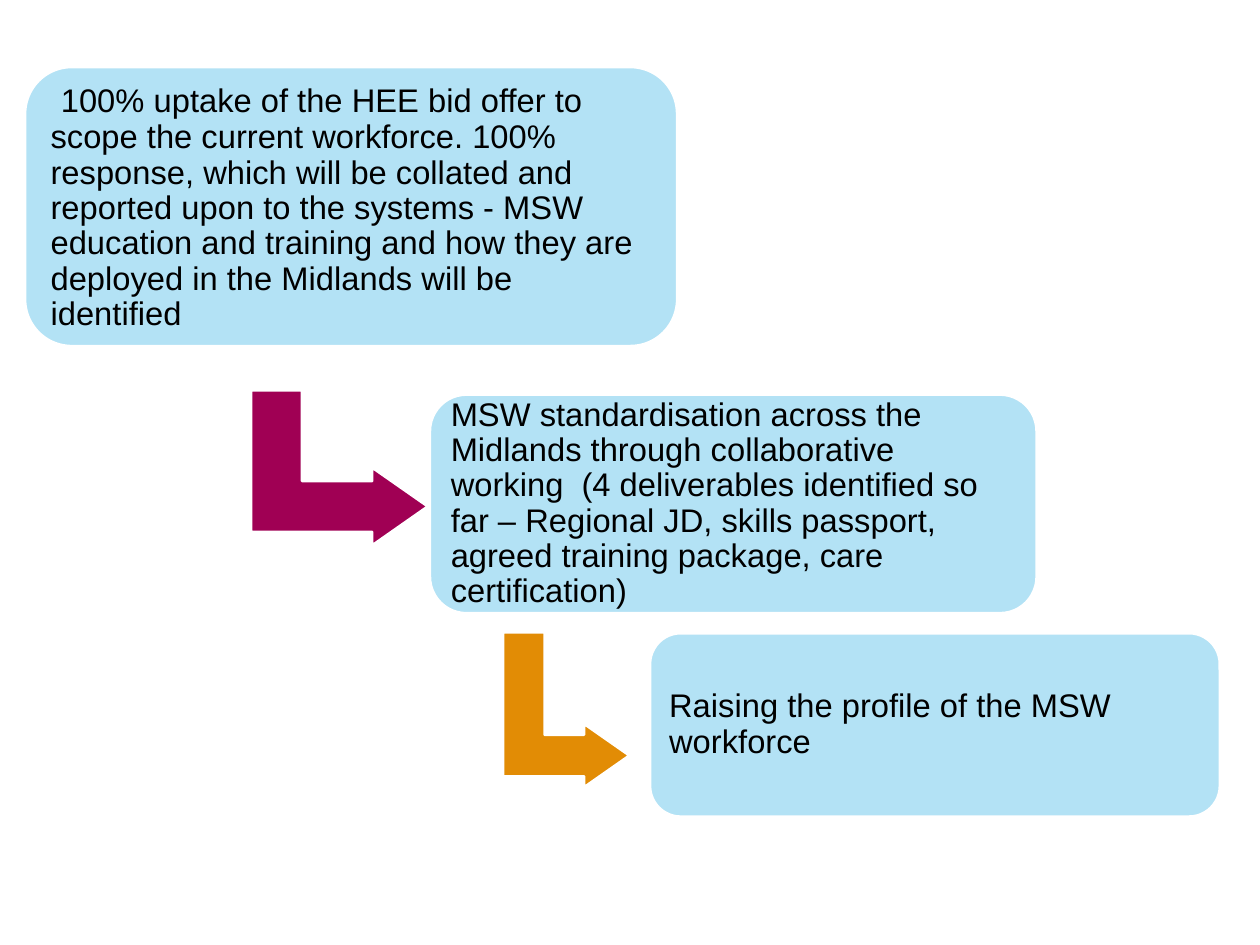
from pptx import Presentation
from pptx.dml.color import RGBColor
from pptx.enum import shapes, text
from pptx.util import Inches, Pt

BLUE = RGBColor(0xB3, 0xE2, 0xF5)
PLUM = RGBColor(0xA0, 0x00, 0x54)
AMBER = RGBColor(0xE2, 0x8C, 0x05)
WHITE = RGBColor(0xFF, 0xFF, 0xFF)
BLACK = RGBColor(0, 0, 0)

# Content: place (left, top, width, height), inset, runs of (words, size)
STEPS = [
    ((0.15, 0.4, 3.88, 1.66), 0.07, [
        (" ", 16),
        ("100% uptake of the HEE bid offer to scope the current workforce. "
         "100% response, which will be collated and reported upon to the "
         "systems - MSW education and training and how they are deployed in "
         "the Midlands will be identified", 14)]),
    ((2.56, 2.35, 3.61, 1.3), 0.06, [
        ("MSW standardisation across the Midlands through collaborative "
         "working  (4 deliverables identified so far – Regional JD, skills "
         "passport, agreed training package, care certification)", 14)]),
    ((3.87, 3.77, 3.39, 1.09), 0.06, [
        ("Raising the profile of the MSW workforce", 14)]),
]
# Arrows: place before the quarter turn, colour
ARROWS = [
    ((1.56, 2.26, 0.92, 1.05), PLUM),
    ((2.91, 3.85, 0.92, 0.75), AMBER),
]

# Slide in 4:3 format
deck = Presentation()
deck.slide_width = Inches(7.5)
deck.slide_height = deck.slide_width * 3 // 4
slide = deck.slides.add_slide(deck.slide_layouts[6])


def add_shape(kind, place, fill, adjust):
    shape = slide.shapes.add_shape(kind, *map(Inches, place))
    shape.shadow.inherit = False
    shape.fill.solid()
    shape.fill.fore_color.rgb = fill
    shape.line.color.rgb = WHITE
    shape.line.width = Pt(1)
    for i, value in enumerate(adjust):
        shape.adjustments[i] = value
    return shape


def write(shape, runs, inset=0.06, font="Arial", color=BLACK, spacing=0.9):
    frame = shape.text_frame
    frame.word_wrap = True
    frame.vertical_anchor = text.MSO_ANCHOR.MIDDLE
    frame.margin_left = frame.margin_right = Inches(inset)
    frame.margin_top = frame.margin_bottom = Inches(inset)
    para = frame.paragraphs[0]
    para.alignment = text.PP_ALIGN.LEFT
    para.line_spacing = spacing
    for words, size in runs:
        run = para.add_run()
        run.text = words
        run.font.name = font
        run.font.size = Pt(size)
        run.font.color.rgb = color


# Arrows leading from each step to the next
for place, color in ARROWS:
    arrow = add_shape(shapes.MSO_SHAPE.BENT_UP_ARROW, place, color,
                      (0.328, 0.25, 0.358))
    arrow.rotation = 90

# Steps
for place, inset, runs in STEPS:
    box = add_shape(shapes.MSO_SHAPE.ROUNDED_RECTANGLE, place, BLUE, (0.167,))
    write(box, runs, inset=inset)

deck.save("out.pptx")
